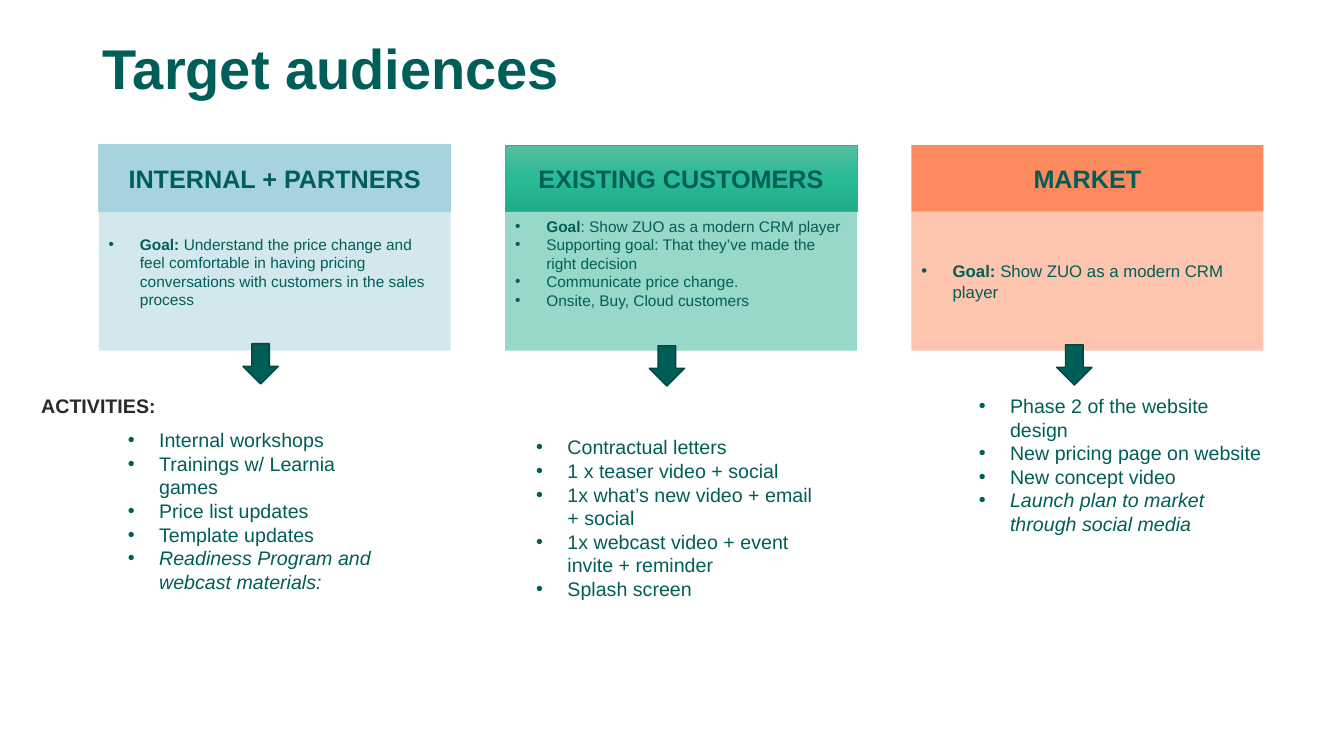
from copy import deepcopy
from dataclasses import dataclass

from pptx import Presentation
from pptx import util as u
from pptx.dml.color import RGBColor
from pptx.enum import shapes, text
from pptx.oxml.ns import qn
from pptx.oxml.xmlchemy import OxmlElement


@dataclass(frozen=True)
class Theme:
    font: str = "Arial"
    green: str = "005E58"
    dark_green: str = "004641"
    charcoal: str = "2B2929"
    blue: str = "A6D3DD"
    mint: str = "30B393"
    mint_gradient: tuple = ("55BEA0", "29BA96", "1FAB89")
    orange: str = "FC8A5E"
    title_size: float = 40
    header_size: float = 18
    activity_size: float = 14
    goal_size: float = 12
    small_goal_size: float = 11
    indent: float = 0.31


def rgb(value):
    return RGBColor.from_string(value)


class AudienceSlide:
    def __init__(self, presentation, theme):
        self.theme = theme
        self.slide = presentation.slides.add_slide(presentation.slide_layouts[5])

    def add_runs(self, paragraph, runs, size, color=None):
        """Add runs given as (wording, style), style being "", "b" or "i"."""
        for wording, style in runs:
            run = paragraph.add_run()
            run.text = wording
            font = run.font
            font.name, font.size = self.theme.font, u.Pt(size)
            font.bold, font.italic = style == "b", style == "i"
            font.color.rgb = rgb(color or self.theme.green)

    def title(self, wording, box):
        shape = self.slide.shapes.title
        shape.left, shape.top, shape.width, shape.height = map(u.Inches, box)
        frame = shape.text_frame
        frame.vertical_anchor = text.MSO_ANCHOR.MIDDLE
        paragraph = frame.paragraphs[0]
        paragraph.alignment = text.PP_ALIGN.LEFT
        paragraph.line_spacing = 0.9
        self.add_runs(paragraph, [(wording, "b")], self.theme.title_size)

    def bullets(self, frame, items, size):
        frame.word_wrap = True
        for index, runs in enumerate(items):
            paragraph = frame.add_paragraph() if index else frame.paragraphs[0]
            paragraph.alignment = text.PP_ALIGN.LEFT
            properties = paragraph._p.get_or_add_pPr()
            indent = u.Inches(self.theme.indent)
            properties.set("marL", str(indent))
            properties.set("indent", str(-indent))
            for tag, key, value in (("a:buFont", "typeface", self.theme.font),
                                    ("a:buChar", "char", "•")):
                element = OxmlElement(tag)
                element.set(key, value)
                properties.append(element)
            self.add_runs(paragraph, runs, size)

    def block(self, kind, box, color, line=None, line_width=1.0):
        shape = self.slide.shapes.add_shape(kind, *map(u.Inches, box))
        shape.shadow.inherit = False
        shape.fill.solid()
        shape.fill.fore_color.rgb = rgb(color)
        if line:
            shape.line.color.rgb = rgb(line)
            shape.line.width = u.Pt(line_width)
        else:
            shape.line.fill.background()
        return shape

    def goal_panel(self, box, color, items, size, anchor, bottom_inset):
        shape = self.block(shapes.MSO_SHAPE.RECTANGLE, box, color)
        # Half transparent fill
        alpha = OxmlElement("a:alpha")
        alpha.set("val", "50000")
        shape._element.spPr.find(".//" + qn("a:srgbClr")).append(alpha)
        frame = shape.text_frame
        frame.vertical_anchor = anchor
        frame.margin_bottom = u.Inches(bottom_inset)
        self.bullets(frame, items, size)

    def header(self, box, color, wording, line_width, gradient):
        shape = self.block(shapes.MSO_SHAPE.RECTANGLE, box, color,
                           color if line_width else None, line_width)
        if gradient:
            self.gradient(shape, gradient)
        frame = shape.text_frame
        frame.vertical_anchor = text.MSO_ANCHOR.MIDDLE
        paragraph = frame.paragraphs[0]
        paragraph.alignment = text.PP_ALIGN.CENTER
        self.add_runs(paragraph, [(wording, "b")], self.theme.header_size)

    def gradient(self, shape, colors):
        shape.fill.gradient()
        shape.fill.gradient_angle = 270
        stop_list = shape._element.spPr.find(".//" + qn("a:gsLst"))
        while len(stop_list) < len(colors):
            stop_list.append(deepcopy(stop_list[0]))
        for index, (stop, color) in enumerate(zip(shape.fill.gradient_stops, colors)):
            stop.position = index / (len(colors) - 1)
            stop.color.rgb = rgb(color)

    def arrow(self, left, top):
        self.block(shapes.MSO_SHAPE.DOWN_ARROW, (left, top, 0.35, 0.4),
                   self.theme.green, self.theme.dark_green)

    def text_box(self, box):
        frame = self.slide.shapes.add_textbox(*map(u.Inches, box)).text_frame
        frame.auto_size = text.MSO_AUTO_SIZE.SHAPE_TO_FIT_TEXT
        return frame

    def activities(self, box, items):
        self.bullets(self.text_box(box), items, self.theme.activity_size)

    def label(self, wording, box):
        frame = self.text_box(box)
        frame.word_wrap = False
        self.add_runs(frame.paragraphs[0], [(wording, "b")],
                      self.theme.activity_size, self.theme.charcoal)


def main():
    theme = Theme()
    presentation = Presentation()
    presentation.slide_width = u.Inches(13.33)
    presentation.slide_height = u.Inches(7.5)
    page = AudienceSlide(presentation, theme)
    page.title("Target audiences", (0.92, 0.24, 11.5, 0.93))

    # Audiences, from left to right
    middle, top = text.MSO_ANCHOR.MIDDLE, text.MSO_ANCHOR.TOP
    audiences = [
        dict(name="INTERNAL + PARTNERS", color=theme.blue, line_width=1,
             gradient=None, size=theme.small_goal_size, anchor=middle,
             bottom_inset=0.24, arrow=(2.41, 3.41),
             goals=[[("Goal: ", "b"),
                     ("Understand the price change and feel comfortable in having "
                      "pricing conversations with customers in the sales process", "")]],
             activity_box=(1.17, 4.2, 2.73, 1.75),
             activities=[[("Internal workshops", "")],
                         [("Trainings w/ Learnia games", "")],
                         [("Price list updates", "")],
                         [("Template updates", "")],
                         [("Readiness Program and webcast materials:", "i")]]),
        dict(name="EXISTING CUSTOMERS", color=theme.mint, line_width=0.5,
             gradient=theme.mint_gradient, size=theme.small_goal_size, anchor=top,
             bottom_inset=0.05, arrow=(6.44, 3.43),
             goals=[[("Goal", "b"), (": Show ZUO as a modern CRM player", "")],
                    [("Supporting goal: That they’ve made the right decision", "")],
                    [("Communicate price change.", "")],
                    [("Onsite, Buy, Cloud customers", "")]],
             activity_box=(5.22, 4.27, 3.07, 1.99),
             activities=[[("Contractual letters", "")],
                         [("1 x teaser video + social", "")],
                         [("1x what’s new video + email + social", "")],
                         [("1x webcast video + event invite + reminder", "")],
                         [("Splash screen", "")]]),
        dict(name="MARKET", color=theme.orange, line_width=0,
             gradient=None, size=theme.goal_size, anchor=middle,
             bottom_inset=0.05, arrow=(10.48, 3.42),
             goals=[[("Goal: ", "b"), ("Show ZUO as a modern CRM player", "")]],
             activity_box=(9.61, 3.86, 3.07, 1.99),
             activities=[[("Phase 2 of the website design", "")],
                         [("New pricing page on website", "")],
                         [("New concept video", "")],
                         [("Launch plan to market through social media", "i")]]),
    ]

    # Cards, arrows and activity lists
    first_left, pitch, width = 0.98, 4.03, 3.49
    for index, audience in enumerate(audiences):
        left = first_left + index * pitch
        page.goal_panel((left, 2.1, width, 1.38), audience["color"], audience["goals"],
                        audience["size"], audience["anchor"], audience["bottom_inset"])
        page.header((left, 1.44, width, 0.66), audience["color"], audience["name"],
                    audience["line_width"], audience["gradient"])
        page.arrow(*audience["arrow"])
        page.activities(audience["activity_box"], audience["activities"])

    page.label("ACTIVITIES:", (0.31, 3.86, 1.35, 0.34))
    presentation.save("out.pptx")


if __name__ == "__main__":
    main()
